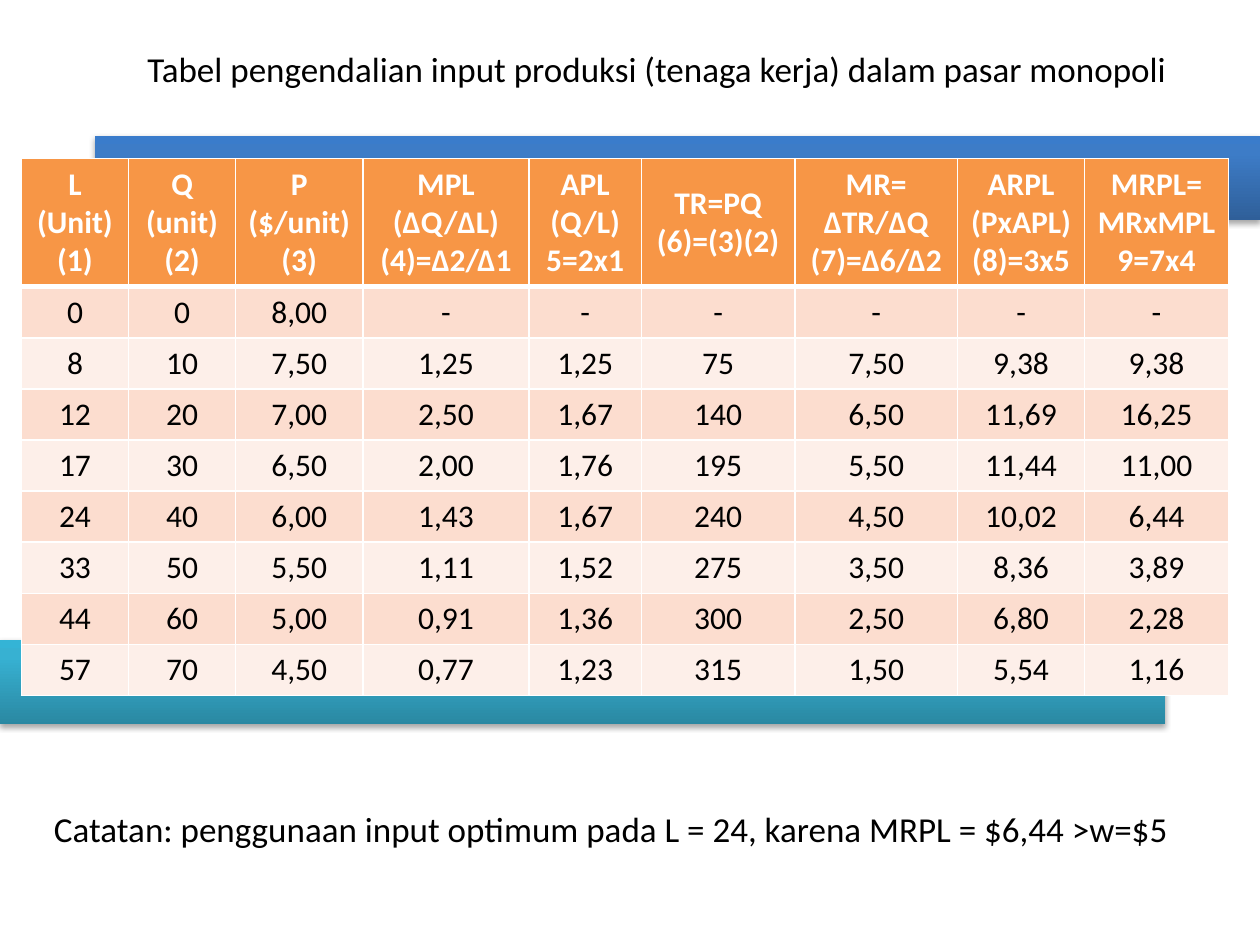
from lxml import etree
from pptx import Presentation
from pptx.dml.color import RGBColor
from pptx.enum.shapes import MSO_SHAPE
from pptx.enum.text import MSO_ANCHOR, MSO_AUTO_SIZE, PP_ALIGN
from pptx.oxml import parse_xml
from pptx.oxml.ns import nsdecls
from pptx.util import Inches, Pt

RECTANGLE = MSO_SHAPE.RECTANGLE
TOP, MIDDLE = MSO_ANCHOR.TOP, MSO_ANCHOR.MIDDLE
LEFT, CENTER = PP_ALIGN.LEFT, PP_ALIGN.CENTER
NO_AUTOFIT = MSO_AUTO_SIZE.NONE
TITLE_ONLY = 5

COLORS = {
    "text": "000000",
    "white": "FFFFFF",
    "header": "F79646",
    "odd_row": "FCDDCF",
    "even_row": "FDEFE9",
}
# Gradient stops as position in percent and color, from bottom to top
BLUE = [(0, "2F5F99"), (80, "3D7CC7"), (100, "3A7CCB")]
TEAL = [(0, "2A88A2"), (80, "37B1D2"), (100, "34B4D6")]

CAPTION_FORMAT = {"name": "Calibri", "size": Pt(20), "bold": False}
CELL_FORMAT = {"name": "Calibri", "size": Pt(18), "bold": False}
HEADER_FORMAT = {**CELL_FORMAT, "bold": True}

COLUMN_WIDTHS = [0.85, 0.85, 1.01, 1.32, 0.89, 1.22, 1.29, 1.01, 1.14]
HEADER_HEIGHT, ROW_HEIGHT = 1.0, 0.4
HEADERS = [
    "L (Unit)\n(1)", "Q (unit)\n(2)", "P ($/unit)\n(3)",
    "MPL (ΔQ/ΔL)\n(4)=Δ2/Δ1", "APL (Q/L)\n5=2x1", "TR=PQ\n(6)=(3)(2)",
    "MR=\nΔTR/ΔQ\n(7)=Δ6/Δ2", "ARPL (PxAPL) (8)=3x5", "MRPL= MRxMPL 9=7x4",
]
ROWS = [
    ["0", "0", "8,00", "-", "-", "-", "-", "-", "-"],
    ["8", "10", "7,50", "1,25", "1,25", "75", "7,50", "9,38", "9,38"],
    ["12", "20", "7,00", "2,50", "1,67", "140", "6,50", "11,69", "16,25"],
    ["17", "30", "6,50", "2,00", "1,76", "195", "5,50", "11,44", "11,00"],
    ["24", "40", "6,00", "1,43", "1,67", "240", "4,50", "10,02", "6,44"],
    ["33", "50", "5,50", "1,11", "1,52", "275", "3,50", "8,36", "3,89"],
    ["44", "60", "5,00", "0,91", "1,36", "300", "2,50", "6,80", "2,28"],
    ["57", "70", "4,50", "0,77", "1,23", "315", "1,50", "5,54", "1,16"],
]


def write_text(frame, text, text_format, color, alignment):
    frame.text = text
    for paragraph in frame.paragraphs:
        paragraph.alignment = alignment
        for run in paragraph.runs:
            for name, value in text_format.items():
                setattr(run.font, name, value)
            run.font.color.rgb = RGBColor.from_string(COLORS[color])


def write_caption(shape, text, left, top, width, height):
    shape.left, shape.top = Inches(left), Inches(top)
    shape.width, shape.height = Inches(width), Inches(height)
    frame = shape.text_frame
    frame.word_wrap = True
    frame.auto_size = NO_AUTOFIT
    frame.vertical_anchor = TOP
    write_text(frame, text, CAPTION_FORMAT, "text", LEFT)


def add_band(slide, left, top, stops):
    """Add a borderless bar with a vertical gradient and a soft shadow."""
    band = slide.shapes.add_shape(
        RECTANGLE, Inches(left), Inches(top), Inches(9.25), Inches(0.67))
    band.line.fill.background()
    band.fill.gradient()
    properties = band.fill._xPr
    gradient_stops = "".join(
        f'<a:gs pos="{position * 1000}"><a:srgbClr val="{color}"/></a:gs>'
        for position, color in stops)
    gradient = parse_xml(
        f'<a:gradFill {nsdecls("a")} rotWithShape="1">'
        f'<a:gsLst>{gradient_stops}</a:gsLst>'
        '<a:lin ang="16200000" scaled="0"/></a:gradFill>')
    properties.replace(properties.gradFill, gradient)
    properties.append(parse_xml(
        f'<a:effectLst {nsdecls("a")}>'
        f'<a:outerShdw blurRad="{Pt(3.1)}" dist="{Pt(1.8)}" dir="5400000" '
        'rotWithShape="0"><a:srgbClr val="000000"><a:alpha val="35000"/>'
        '</a:srgbClr></a:outerShdw></a:effectLst>'))


def set_borders(cell, top_width, bottom_width):
    widths = {"lnL": 1, "lnR": 1, "lnT": top_width, "lnB": bottom_width}
    properties = cell._tc.get_or_add_tcPr()
    for index, (side, width) in enumerate(widths.items()):
        properties.insert(index, etree.fromstring(
            f'<a:{side} {nsdecls("a")} w="{Pt(width)}"><a:solidFill>'
            f'<a:srgbClr val="{COLORS["white"]}"/></a:solidFill></a:{side}>'))


def add_input_table(slide, left, top):
    row_heights = [HEADER_HEIGHT] + [ROW_HEIGHT] * len(ROWS)
    table = slide.shapes.add_table(
        len(row_heights), len(COLUMN_WIDTHS), Inches(left), Inches(top),
        Inches(sum(COLUMN_WIDTHS)), Inches(sum(row_heights))).table
    for column, width in zip(table.columns, COLUMN_WIDTHS):
        column.width = Inches(width)

    for row_index, values in enumerate([HEADERS] + ROWS):
        table.rows[row_index].height = Inches(row_heights[row_index])
        is_header = row_index == 0
        row_color = "odd_row" if row_index % 2 else "even_row"
        for column_index, value in enumerate(values):
            cell = table.cell(row_index, column_index)
            cell.vertical_anchor = MIDDLE
            cell.fill.solid()
            cell.fill.fore_color.rgb = RGBColor.from_string(
                COLORS["header" if is_header else row_color])
            write_text(cell.text_frame, value,
                       HEADER_FORMAT if is_header else CELL_FORMAT,
                       "white" if is_header else "text", CENTER)
            # A thick rule separates the header from the first data row
            set_borders(cell, 3 if row_index == 1 else 1,
                        3 if is_header else 1)


def main():
    presentation = Presentation()
    presentation.slide_width = Inches(10)
    presentation.slide_height = Inches(7.5)
    slide = presentation.slides.add_slide(
        presentation.slide_layouts[TITLE_ONLY])

    # Decorative bands behind the table
    add_band(slide, 0, 5.08, TEAL)
    add_band(slide, 0.75, 1.08, BLUE)

    add_input_table(slide, 0.17, 1.26)

    # Title and closing note
    write_caption(
        slide.shapes.title,
        "Tabel pengendalian input produksi (tenaga kerja) dalam pasar monopoli",
        1.07, 0.33, 8.37, 0.44)
    write_caption(
        slide.shapes.add_textbox(0, 0, 0, 0),
        "Catatan: penggunaan input optimum pada L = 24, "
        "karena MRPL = $6,44 >w=$5",
        0.33, 6.36, 9.17, 0.44)

    presentation.save("out.pptx")


if __name__ == "__main__":
    main()
